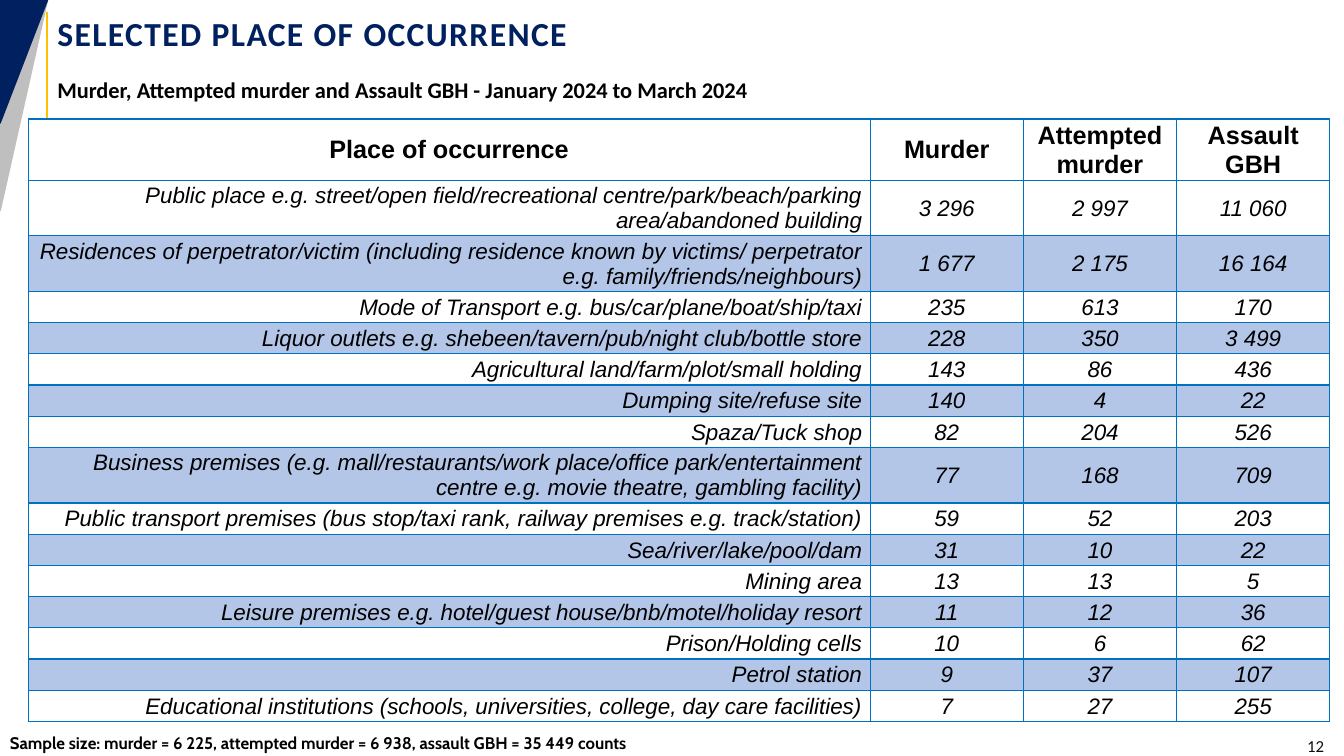
from dataclasses import dataclass
from typing import Any

from lxml import etree
from pptx import Presentation
from pptx.dml.color import RGBColor
from pptx.enum.shapes import MSO_CONNECTOR, MSO_SHAPE
from pptx.enum.text import MSO_ANCHOR, PP_ALIGN
from pptx.oxml.ns import qn
from pptx.util import Inches, Pt

LEFT, CENTER, RIGHT = PP_ALIGN.LEFT, PP_ALIGN.CENTER, PP_ALIGN.RIGHT
TOP, MIDDLE = MSO_ANCHOR.TOP, MSO_ANCHOR.MIDDLE
TRIANGLE, STRAIGHT = MSO_SHAPE.RIGHT_TRIANGLE, MSO_CONNECTOR.STRAIGHT

NAVY = RGBColor(0x00, 0x20, 0x60)
GREY = RGBColor(0xBF, 0xBF, 0xBF)
GOLD = RGBColor(0xFF, 0xC0, 0x00)
BLACK = RGBColor(0x00, 0x00, 0x00)
NEAR_BLACK = RGBColor(0x0D, 0x0D, 0x0D)
BORDER_BLUE = RGBColor(0x00, 0x70, 0xC0)
BAND_BLUE = RGBColor(0xB4, 0xC6, 0xE7)

SLIDE_WIDTH, SLIDE_HEIGHT = 13.33, 7.5
EDGE_X = 0.47
COLUMN_WIDTHS = (8.35, 1.52, 1.52, 1.52)
HEADER_HEIGHT, ONE_LINE, TWO_LINES = 0.61, 0.31, 0.55

HEADER_FONT = {"name": "Arial", "size": Pt(18), "bold": True, "italic": False}
BODY_FONT = {"name": "Arial", "size": Pt(16), "bold": False, "italic": True}


@dataclass(frozen=True)
class Corner:
    height: float
    color: RGBColor


@dataclass(frozen=True)
class Caption:
    text: str
    box: tuple[float, float, float, float]
    font: dict[str, Any]
    color: RGBColor = BLACK
    anchor: MSO_ANCHOR = TOP
    paragraph: dict[str, Any] | None = None
    letter_spacing: int = 0


@dataclass(frozen=True)
class Place:
    name: str
    murder: str
    attempted: str
    assault: str
    height: float = ONE_LINE


CORNERS = (Corner(2.09, GREY), Corner(1.22, NAVY))

CAPTIONS = (
    Caption("12", (11.85, 7.27, 1.38, 0.26), {"name": "Calibri", "size": Pt(12)},
            NEAR_BLACK, MIDDLE, {"alignment": RIGHT}),
    Caption("SELECTED PLACE OF OCCURRENCE", (EDGE_X, 0.12, 11.96, 0.49),
            {"name": "Calibri", "size": Pt(24), "bold": True}, NAVY, MIDDLE,
            {"line_spacing": 0.8}, 100),
    Caption("Murder, Attempted murder and Assault GBH - January 2024 to March 2024",
            (EDGE_X, 0.68, 11.96, 0.48),
            {"name": "Calibri", "size": Pt(16), "bold": True},
            paragraph={"line_spacing": 1.08, "space_before": Pt(6), "space_after": Pt(2)}),
    Caption("Sample size: murder = 6 225, attempted murder = 6 938, "
            "assault GBH = 35 449 counts", (0, 7.22, SLIDE_WIDTH, 0.3),
            {"name": "Cabin", "size": Pt(12), "bold": True}),
)

PLACES = (
    Place("Place of occurrence", "Murder", "Attempted murder", "Assault GBH", HEADER_HEIGHT),
    Place("Public place e.g. street/open field/recreational centre/park/beach/parking "
          "area/abandoned building", "3 296", "2 997", "11 060", TWO_LINES),
    Place("Residences of perpetrator/victim (including residence known by victims/ "
          "perpetrator e.g. family/friends/neighbours)",
          "1 677", "2 175", "16 164", TWO_LINES),
    Place("Mode of Transport e.g. bus/car/plane/boat/ship/taxi", "235", "613", "170"),
    Place("Liquor outlets e.g. shebeen/tavern/pub/night club/bottle store",
          "228", "350", "3 499"),
    Place("Agricultural land/farm/plot/small holding", "143", "86", "436"),
    Place("Dumping site/refuse site", "140", "4", "22"),
    Place("Spaza/Tuck shop", "82", "204", "526"),
    Place("Business premises (e.g. mall/restaurants/work place/office park/entertainment "
          "centre e.g. movie theatre, gambling facility)", "77", "168", "709", TWO_LINES),
    Place("Public transport premises (bus stop/taxi rank, railway premises e.g. "
          "track/station)", "59", "52", "203"),
    Place("Sea/river/lake/pool/dam", "31", "10", "22"),
    Place("Mining area", "13", "13", "5"),
    Place("Leisure premises e.g. hotel/guest house/bnb/motel/holiday resort",
          "11", "12", "36"),
    Place("Prison/Holding cells", "10", "6", "62"),
    Place("Petrol station", "9", "37", "107"),
    Place("Educational institutions (schools, universities, college, day care facilities)",
          "7", "27", "255"),
)


def apply_format(target: Any, values: dict[str, Any]) -> None:
    for attribute, value in values.items():
        setattr(target, attribute, value)


def draw_corner(slide: Any, corner: Corner) -> None:
    triangle = slide.shapes.add_shape(TRIANGLE, 0, 0, Inches(EDGE_X), Inches(corner.height))
    triangle.shadow.inherit = False
    triangle.fill.solid()
    triangle.fill.fore_color.rgb = corner.color
    triangle.line.color.rgb = corner.color
    triangle.line.width = Pt(1.25)
    triangle._element.spPr.find(qn("a:xfrm")).set("flipV", "1")


def draw_title_rule(slide: Any) -> None:
    rule = slide.shapes.add_connector(
        STRAIGHT, Inches(EDGE_X), Inches(1.17), Inches(EDGE_X), Inches(0.12))
    rule.line.color.rgb = GOLD
    rule.line.width = Pt(1.25)
    etree.SubElement(rule._element.spPr, qn("a:effectLst"))


def draw_caption(slide: Any, caption: Caption) -> None:
    frame = slide.shapes.add_textbox(*map(Inches, caption.box)).text_frame
    apply_format(frame, {"word_wrap": True, "vertical_anchor": caption.anchor})
    paragraph = frame.paragraphs[0]
    apply_format(paragraph, caption.paragraph or {"alignment": LEFT})
    run = paragraph.add_run()
    run.text = caption.text
    apply_format(run.font, caption.font)
    run.font.color.rgb = caption.color
    if caption.letter_spacing:
        run._r.get_or_add_rPr().set("spc", str(caption.letter_spacing))


def add_borders(cell: Any) -> None:
    properties = cell._tc.get_or_add_tcPr()
    for position, side in enumerate(("lnL", "lnR", "lnT", "lnB")):
        border = etree.Element(qn(f"a:{side}"), w=str(Pt(1)))
        fill = etree.SubElement(border, qn("a:solidFill"))
        etree.SubElement(fill, qn("a:srgbClr"), val=str(BORDER_BLUE))
        properties.insert(position, border)


def fill_cell(cell: Any, text: str, is_header: bool, is_name: bool, banded: bool) -> None:
    right_aligned = is_name and not is_header
    apply_format(cell, {
        "vertical_anchor": MIDDLE,
        "margin_left": Inches(0.01),
        "margin_top": Inches(0.01),
        "margin_right": Inches(0.08 if right_aligned else 0.01),
        "margin_bottom": 0,
    })
    if banded:
        cell.fill.solid()
        cell.fill.fore_color.rgb = BAND_BLUE
    else:
        cell.fill.background()
    paragraph = cell.text_frame.paragraphs[0]
    paragraph.alignment = RIGHT if right_aligned else CENTER
    run = paragraph.add_run()
    run.text = text
    apply_format(run.font, HEADER_FONT if is_header else BODY_FONT)
    run.font.color.rgb = BLACK
    add_borders(cell)


def draw_places(slide: Any, places: tuple[Place, ...]) -> None:
    table = slide.shapes.add_table(
        len(places), len(COLUMN_WIDTHS), Inches(0.28), Inches(1.18),
        Inches(sum(COLUMN_WIDTHS)), Inches(sum(place.height for place in places))).table
    apply_format(table, {"first_row": False, "horz_banding": False})
    for column, width in zip(table.columns, COLUMN_WIDTHS):
        column.width = Inches(width)
    for row, place in enumerate(places):
        table.rows[row].height = Inches(place.height)
        texts = (place.name, place.murder, place.attempted, place.assault)
        for column, text in enumerate(texts):
            fill_cell(table.cell(row, column), text, is_header=row == 0,
                      is_name=column == 0, banded=row > 0 and row % 2 == 0)


def main() -> None:
    deck = Presentation()
    apply_format(deck, {"slide_width": Inches(SLIDE_WIDTH),
                        "slide_height": Inches(SLIDE_HEIGHT)})
    slide = deck.slides.add_slide(deck.slide_layouts[6])

    # Corner decoration
    for corner in CORNERS:
        draw_corner(slide, corner)
    draw_title_rule(slide)

    # Headings, sample size and page number
    for caption in CAPTIONS:
        draw_caption(slide, caption)

    # Places of occurrence
    draw_places(slide, PLACES)
    deck.save("out.pptx")


if __name__ == "__main__":
    main()
